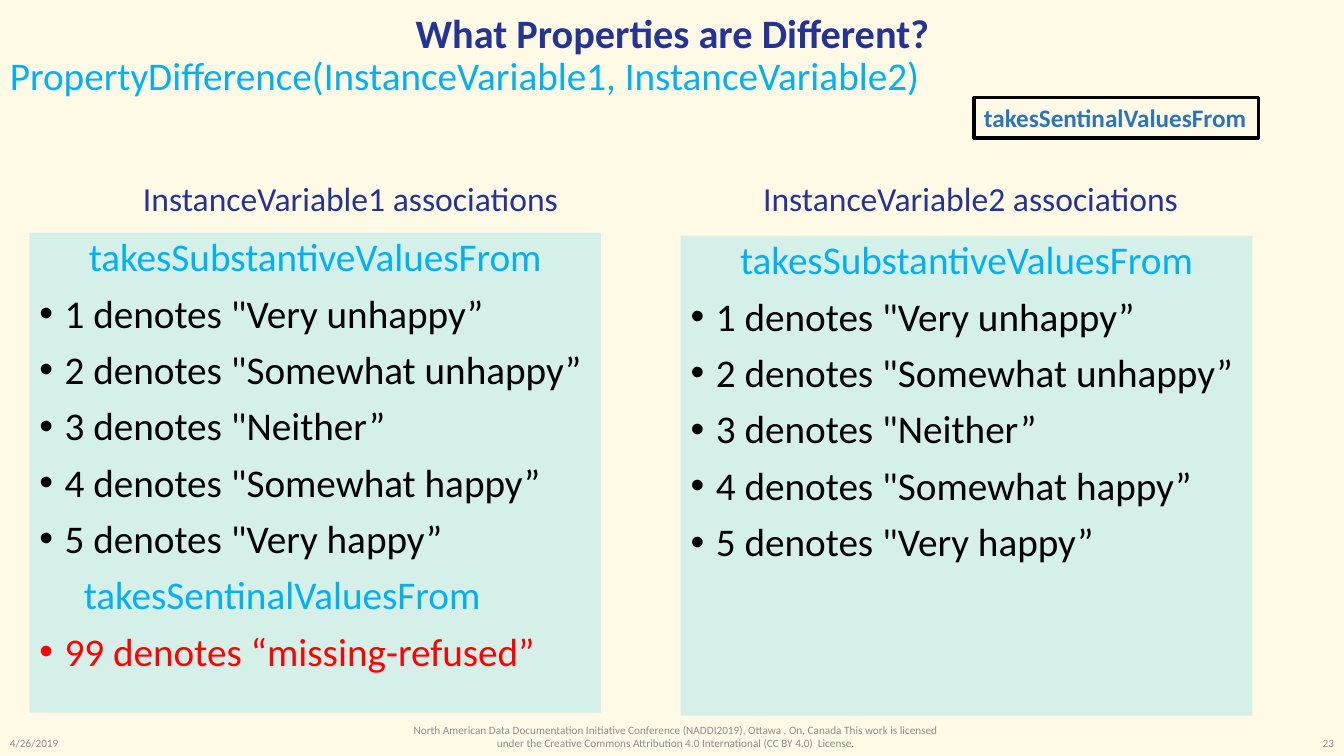
from lxml.etree import SubElement
from pptx import Presentation
from pptx.dml.color import RGBColor
from pptx.enum.shapes import MSO_SHAPE
from pptx.enum.text import MSO_ANCHOR, MSO_AUTO_SIZE, PP_ALIGN
from pptx.oxml.ns import qn
from pptx.util import Inches, Pt

INK = {
    "cream": "FFFAE6", "mint": "D5EFE9", "navy": "253494", "sky": "00B0F0",
    "blue": "2E75B6", "black": "000000", "red": "FF0000", "gray": "8C8C8C",
}
FONT = "Calibri"
LEFT, MID, RIGHT = PP_ALIGN.LEFT, PP_ALIGN.CENTER, PP_ALIGN.RIGHT
TOP, CORE = MSO_ANCHOR.TOP, MSO_ANCHOR.MIDDLE


def tone(name):
    return RGBColor.from_string(INK[name])


class Deck:
    """Holds the slide and its style; boxes are left, top, width, height in percent."""

    def __init__(self):
        self.prs = Presentation()
        self.prs.slide_width, self.prs.slide_height = Inches(13.33), Inches(7.5)
        self.slide = self.prs.slides.add_slide(self.prs.slide_layouts[3])
        self.slide.background.fill.solid()
        self.slide.background.fill.fore_color.rgb = tone("cream")

    def scale(self, box):
        wide, high = self.prs.slide_width, self.prs.slide_height
        return [int(part * side / 100) for part, side in zip(box, (wide, high) * 2)]

    def place(self, shape, box):
        shape.left, shape.top, shape.width, shape.height = self.scale(box)

    def frame(self, shape, anchor=TOP, wrap=True):
        frame = shape.text_frame
        frame.auto_size = MSO_AUTO_SIZE.NONE
        frame.word_wrap, frame.vertical_anchor = wrap, anchor
        return frame

    def style(self, para, size, color, align=LEFT, bold=False):
        para.alignment = align
        for run in para.runs:
            font = run.font
            font.name, font.size, font.bold = FONT, Pt(size), bold
            font.color.rgb = tone(color)

    def title(self, text, box):
        shape = self.slide.shapes.title
        self.place(shape, box)
        frame = self.frame(shape, CORE)
        frame.text = text
        para = frame.paragraphs[0]
        para.line_spacing = 0.9
        self.style(para, 28.8, "navy", MID, True)

    def panel(self, slot, box, items):
        """Fill a body placeholder with (text, color, align, indent, bullet) items."""
        shape = self.slide.placeholders[slot]
        self.place(shape, box)
        shape.fill.solid()
        shape.fill.fore_color.rgb = tone("mint")
        frame = self.frame(shape)
        frame.text = "\n".join(item[0] for item in items)
        for para, (_, color, align, indent, dot) in zip(frame.paragraphs, items):
            para.line_spacing = 0.9
            para.space_before, para.space_after = Pt(10), Pt(0)
            self.style(para, 28, color, align)
            self.bullet(para, indent, dot)

    def bullet(self, para, indent, dot):
        props = para._p.get_or_add_pPr()
        props.set("marL", str(Inches(indent)))
        props.set("indent", str(-Inches(indent) if dot else 0))
        if dot:
            SubElement(props, qn("a:buFont")).set("typeface", "Arial")
            SubElement(props, qn("a:buChar")).set("char", "•")
        else:
            SubElement(props, qn("a:buNone"))

    def label(self, text, box, size, color, align=LEFT, anchor=TOP, wrap=False):
        shape = self.slide.shapes.add_textbox(*self.scale(box))
        frame = self.frame(shape, anchor, wrap)
        frame.text = text
        self.style(frame.paragraphs[0], size, color, align)

    def tag(self, text, box):
        shape = self.slide.shapes.add_shape(MSO_SHAPE.RECTANGLE, *self.scale(box))
        shape.shadow.inherit = False
        shape.fill.background()
        shape.line.color.rgb, shape.line.width = tone("black"), Pt(2.25)
        frame = self.frame(shape, wrap=False)
        frame.text = text
        self.style(frame.paragraphs[0], 18, "blue", bold=True)


def main():
    deck = Deck()
    deck.title("What Properties are Different?", (6.9, 0.93, 86.27, 7.6))

    moods = ["Very unhappy", "Somewhat unhappy", "Neither", "Somewhat happy", "Very happy"]
    values = [("takesSubstantiveValuesFrom", "sky", MID, 0, False)]
    values += [(f'{code} denotes "{mood}”', "black", LEFT, 0.25, True)
               for code, mood in enumerate(moods, 1)]
    missing = [("takesSentinalValuesFrom", "sky", LEFT, 0.44, False),
               ("99 denotes “missing-refused”", "red", LEFT, 0.25, True)]
    deck.panel(1, (2.18, 30.8, 42.54, 63.47), values + missing)
    deck.panel(2, (50.64, 31.2, 42.54, 63.47), values)

    notice = ("North American Data Documentation Initiative Conference (NADDI2019), "
              "Ottawa , On, Canada This work is licensed under the Creative Commons "
              "Attribution 4.0 International (CC BY 4.0)  License.")
    for text, box, align in [
        ("4/26/2019", (0, 96.53, 22.5, 3.47), LEFT),
        (notice, (29.11, 94.8, 42.39, 5.2), MID),
        ("23", (77.5, 96.53, 22.5, 3.47), RIGHT),
    ]:
        deck.label(text, box, 8, "gray", align, CORE, True)

    deck.label("PropertyDifference(InstanceVariable1, InstanceVariable2)",
               (0, 6.13, 70.67, 7.6), 28, "sky")
    for num, left in enumerate((9.9, 56.04), 1):
        deck.label(f"InstanceVariable{num} associations",
                   (left, 22.93, 32.71, 6.67), 24, "navy")
    deck.tag("takesSentinalValuesFrom", (72.47, 12.93, 21.16, 5.33))
    deck.prs.save("out.pptx")


if __name__ == "__main__":
    main()
